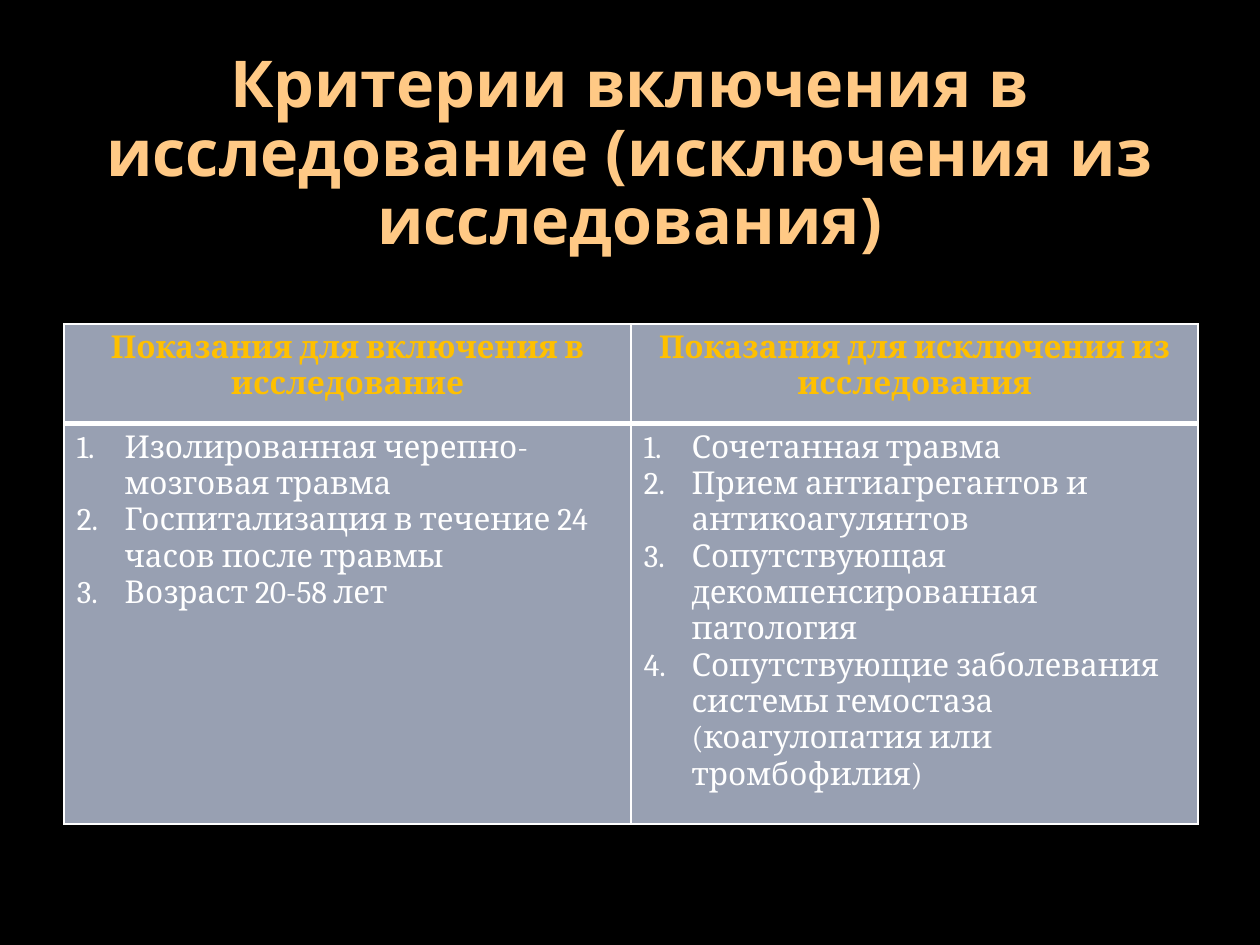
from lxml import etree
from pptx import Presentation
from pptx.dml.color import RGBColor
from pptx.enum.text import MSO_ANCHOR, PP_ALIGN
from pptx.oxml.ns import qn
from pptx.util import Inches, Pt

CENTER, LEFT = PP_ALIGN.CENTER, PP_ALIGN.LEFT
MIDDLE = MSO_ANCHOR.MIDDLE

COLORS = {
    "background": "000000",
    "title": "FFC985",
    "header": "FFC000",
    "body": "FFFFFF",
    "cell": "98A0B2",
    "border": "FFFFFF",
}

TITLE = "Критерии включения в исследование (исключения из исследования)"
CRITERIA = [
    ("Показания для включения в исследование", [
        "Изолированная черепно-мозговая травма",
        "Госпитализация в течение 24 часов после травмы",
        "Возраст 20-58 лет",
    ]),
    ("Показания для исключения из исследования", [
        "Сочетанная травма",
        "Прием антиагрегантов и антикоагулянтов",
        "Сопутствующая декомпенсированная патология",
        "Сопутствующие заболевания системы гемостаза (коагулопатия или тромбофилия)",
    ]),
]


def rgb(name):
    return RGBColor.from_string(COLORS[name])


def write(frame, lines, *, font="Cambria", size=18, color="body", bold=False,
          align=LEFT, spacing=None, numbered=False):
    frame.word_wrap = True
    for index, line in enumerate(lines):
        paragraph = frame.add_paragraph() if index else frame.paragraphs[0]
        paragraph.alignment = align
        if spacing:
            paragraph.line_spacing = spacing
        if numbered:
            number_paragraph(paragraph)
        run = paragraph.add_run()
        run.text = line
        run.font.name = font
        run.font.size = Pt(size)
        run.font.bold = bold
        run.font.color.rgb = rgb(color)


def number_paragraph(paragraph):
    properties = paragraph._p.get_or_add_pPr()
    indent = Inches(0.38)
    properties.set("marL", str(indent))
    properties.set("indent", str(-indent))
    etree.SubElement(properties, qn("a:buFont"), typeface="+mj-lt")
    etree.SubElement(properties, qn("a:buAutoNum"), type="arabicPeriod")


def style_cell(cell, top=1, bottom=1):
    properties = cell._tc.get_or_add_tcPr()
    for side, width in (("L", 1), ("R", 1), ("T", top), ("B", bottom)):
        line = etree.SubElement(properties, qn(f"a:ln{side}"), w=str(Pt(width)))
        fill = etree.SubElement(line, qn("a:solidFill"))
        etree.SubElement(fill, qn("a:srgbClr"), val=COLORS["border"])
    cell.fill.solid()
    cell.fill.fore_color.rgb = rgb("cell")


def add_title(slide, left, top, width, height):
    frame = slide.shapes.add_textbox(left, top, width, height).text_frame
    frame.vertical_anchor = MIDDLE
    write(frame, [TITLE], font="Noto Sans", size=36.9, color="title",
          bold=True, align=CENTER, spacing=0.88)


def add_criteria(slide, left, top, width, height):
    table = slide.shapes.add_table(2, len(CRITERIA), left, top, width, height).table
    header_height = Inches(0.79)
    table.rows[0].height = header_height
    table.rows[1].height = height - header_height
    for column, (heading, items) in enumerate(CRITERIA):
        header, body = table.cell(0, column), table.cell(1, column)
        style_cell(header, bottom=3)
        style_cell(body, top=3)
        write(header.text_frame, [heading], color="header", bold=True, align=CENTER)
        write(body.text_frame, items, numbered=True)


def main():
    presentation = Presentation()
    presentation.slide_width, presentation.slide_height = Inches(10), Inches(7.5)
    slide = presentation.slides.add_slide(presentation.slide_layouts[6])
    slide.background.fill.solid()
    slide.background.fill.fore_color.rgb = rgb("background")
    add_title(slide, Inches(0.5), Inches(0.3), Inches(9), Inches(1.87))
    add_criteria(slide, Inches(0.51), Inches(2.57), Inches(9), Inches(3.97))
    presentation.save("out.pptx")


if __name__ == "__main__":
    main()
